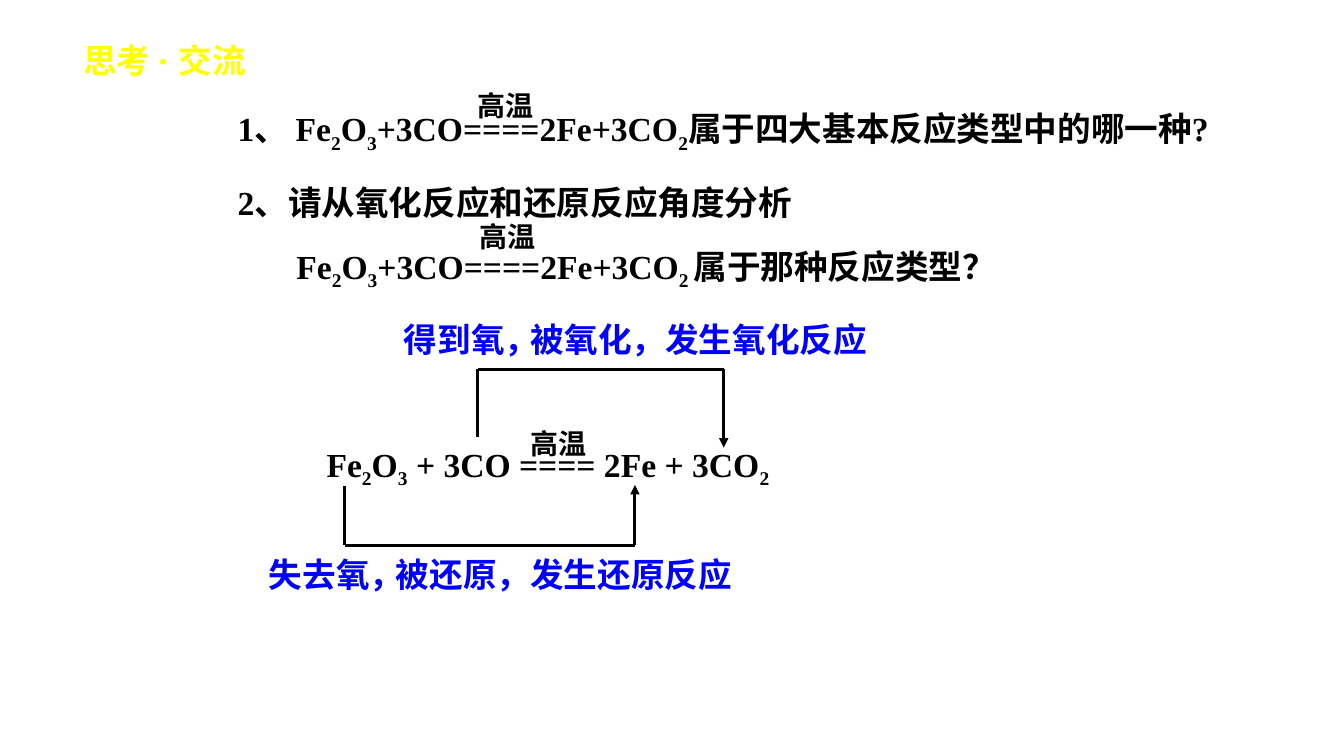
"""Builds a slide on oxidation and reduction in the iron oxide reaction."""
from lxml import etree
from pptx import Presentation
from pptx.dml.color import RGBColor
from pptx.enum.shapes import MSO_CONNECTOR
from pptx.enum.text import MSO_AUTO_SIZE
from pptx.oxml.ns import qn
from pptx.util import Cm, Pt

STRAIGHT = MSO_CONNECTOR.STRAIGHT
FIT_SHAPE = MSO_AUTO_SIZE.SHAPE_TO_FIT_TEXT
SERIF, SANS, CHINESE = "Times New Roman", "Arial", "Noto Sans CJK SC"
BLACK, BLUE, YELLOW = "000000", "0000FF", "FFFF00"


def color(value):
    return RGBColor.from_string(value)


class Page:
    """Holds the text and line style and the slide being drawn."""

    def __init__(self, deck):
        self.slide = deck.slides.add_slide(deck.slide_layouts[6])
        self.line_width = Pt(2.25)

    def text(self, left, top, width, height, lines, size=24, font=SERIF,
             ink=BLACK, spacing=1.0, indent=0):
        """Adds a text box; an underscore makes the next character a subscript."""
        box = self.slide.shapes.add_textbox(Cm(left), Cm(top), Cm(width), Cm(height))
        frame = box.text_frame
        frame.word_wrap = True
        frame.auto_size = FIT_SHAPE
        for number, line in enumerate(lines):
            para = frame.add_paragraph() if number else frame.paragraphs[0]
            para.line_spacing = spacing
            if number and indent:
                para._p.get_or_add_pPr().set("marL", str(Cm(indent)))
            self.style(para, size, font, ink)
            first, *rest = line.split("_")
            self.span(para, first)
            for piece in rest:
                self.span(para, piece[0], subscript=True)
                self.span(para, piece[1:])
        return frame.paragraphs[0]

    def style(self, para, size, font, ink):
        """Sets the font of a whole paragraph."""
        para.font.size = Pt(size)
        para.font.bold = True
        para.font.name = font
        para.font.color.rgb = color(ink)
        latin = para._p.pPr.find(qn("a:defRPr")).find(qn("a:latin"))
        east_asian = etree.Element(qn("a:ea"), typeface=CHINESE)
        latin.addnext(east_asian)

    def span(self, para, words, subscript=False, font=None):
        """Adds a run, if there are any words."""
        if not words:
            return
        span = para.add_run()
        span.text = words
        if font:
            span.font.name = font
        if subscript:
            span._r.get_or_add_rPr().set("baseline", "-25000")

    def line(self, start, end, arrow=False):
        """Adds a straight line, with an arrowhead at its end if wanted."""
        line = self.slide.shapes.add_connector(
            STRAIGHT, *(Cm(length) for length in (*start, *end)))
        line.line.color.rgb = color(BLACK)
        line.line.width = self.line_width
        if arrow:
            etree.SubElement(line.line._get_or_add_ln(), qn("a:tailEnd"), type="triangle")
        etree.SubElement(line._element.spPr, qn("a:effectLst"))

    def bracket(self, start, end, bar):
        """Joins two points by a horizontal bar, with an arrow into the second."""
        corners = [start, (start[0], bar), (end[0], bar), end]
        for number in range(3):
            self.line(corners[number], corners[number + 1], arrow=number == 2)

    def condition(self, left, top, height=1.09, spacing=1.0):
        """Adds the reaction condition above an equals sign."""
        self.text(left, top, 2.8, height, ["高温"], size=20, font=SANS, spacing=spacing)


def main():
    deck = Presentation()
    deck.slide_width, deck.slide_height = Cm(33.87), Cm(19.05)
    page = Page(deck)

    title = page.text(1.85, 0.89, 5.28, 1.27, ["思考 "], font=CHINESE, ink=YELLOW)
    page.span(title, "· ", font=SANS)
    page.span(title, "交流")

    reaction = "Fe_2O_3+3CO====2Fe+3CO_2"
    page.text(5.74, 2.54, 27.81, 1.24,
              [f"1、 {reaction}属于四大基本反应类型中的哪一种?"], spacing=1.05)
    page.condition(11.78, 2.11)
    page.text(5.74, 3.96, 20.52, 3.33,
              ["2、请从氧化反应和还原反应角度分析", f"{reaction}_ 属于那种反应类型？"],
              spacing=1.5, indent=1.48)
    page.condition(11.84, 4.98, height=1.55, spacing=1.5)

    for left, right, top, change, result in (
            (9.93, 13.13, 7.92, "得到氧，", "被氧化，发生氧化反应"),
            (6.53, 9.73, 13.84, "失去氧，", "被还原，发生还原反应")):
        page.text(left, top, 4, 1.27, [change], ink=BLUE)
        page.text(right, top, 9.12, 1.27, [result], ink=BLUE)

    page.text(7.98, 11.05, 18.75, 1.27, ["Fe_2O_3 + 3CO ==== 2Fe + 3CO_2"])
    page.condition(13.13, 10.62)
    page.bracket((12.04, 11.02), (18.24, 11.28), bar=9.3)
    page.bracket((8.69, 12.24), (16, 12.22), bar=13.74)

    deck.save("out.pptx")


if __name__ == "__main__":
    main()
